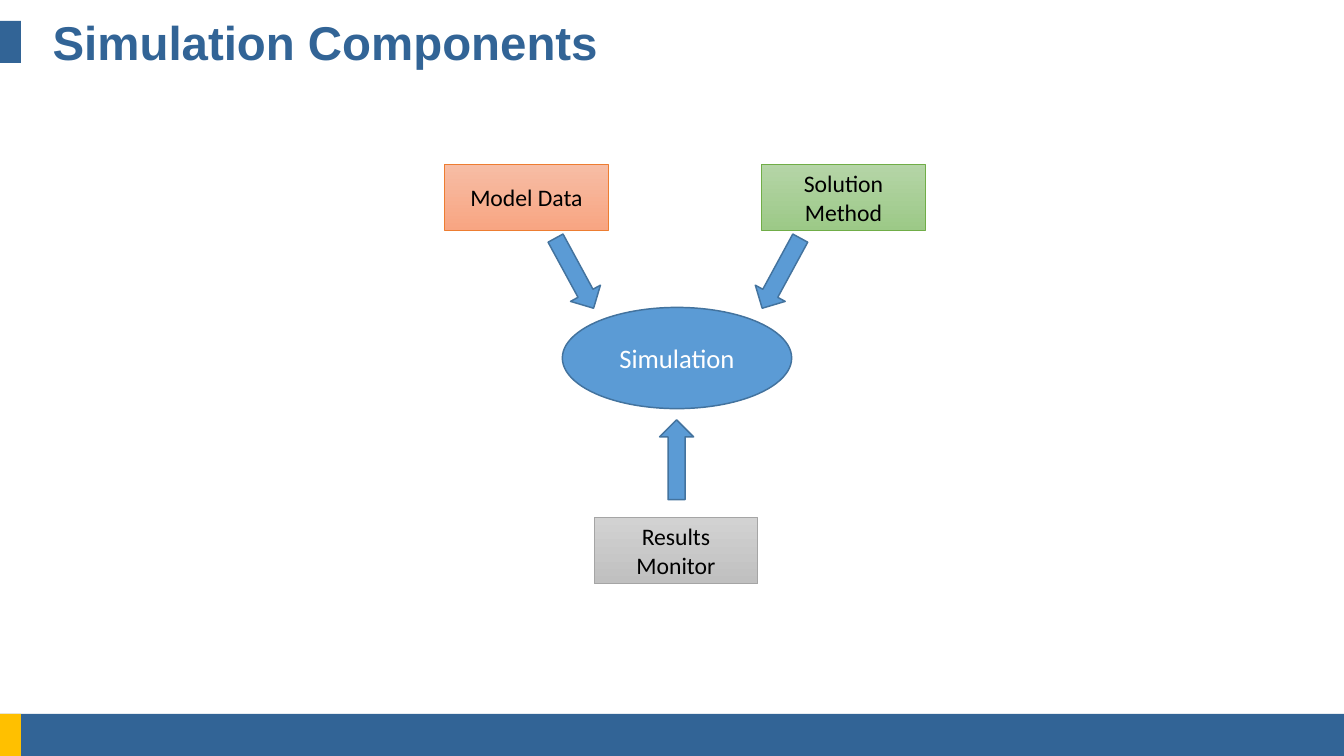
import collections

import pptx
import pptx.dml.color
import pptx.enum.shapes
import pptx.enum.text
import pptx.util

Cm = pptx.util.Cm
Pt = pptx.util.Pt
RGBColor = pptx.dml.color.RGBColor
SHAPE = pptx.enum.shapes.MSO_SHAPE
ALIGN = pptx.enum.text.PP_ALIGN
ANCHOR = pptx.enum.text.MSO_ANCHOR

NAVY = RGBColor(0x32, 0x64, 0x96)
GOLD = RGBColor(0xFF, 0xC0, 0x00)
BLUE = RGBColor(0x5B, 0x9B, 0xD5)
BLUE_EDGE = RGBColor(0x43, 0x73, 0x9E)
BLACK = RGBColor(0x00, 0x00, 0x00)
WHITE = RGBColor(0xFF, 0xFF, 0xFF)
ORANGE = RGBColor(0xED, 0x7D, 0x31)
ORANGE_TOP = RGBColor(0xF7, 0xBD, 0xA5)
ORANGE_BOTTOM = RGBColor(0xF8, 0xA5, 0x82)
GREEN = RGBColor(0x70, 0xAD, 0x47)
GREEN_TOP = RGBColor(0xB5, 0xD5, 0xA7)
GREEN_BOTTOM = RGBColor(0x9C, 0xC9, 0x87)
GRAY = RGBColor(0xA5, 0xA5, 0xA5)
GRAY_TOP = RGBColor(0xD2, 0xD2, 0xD2)
GRAY_BOTTOM = RGBColor(0xC0, 0xC0, 0xC0)

TITLE_FONT = {"name": "Arial", "size": Pt(32), "bold": True}
BOX_FONT = {"name": "Calibri", "size": Pt(16)}
CORE_FONT = {"name": "Calibri", "size": Pt(18)}

# Lengths in centimetres
Box = collections.namedtuple("Box", "left top width height")

COMPONENT_SIZE = (3.89, 1.58)
ARROW_SIZE = (1.9, 0.81)

# Text, offset in the diagram, top colour, bottom colour, edge colour
COMPONENTS = [
    ("Model Data", (0, 0), ORANGE_TOP, ORANGE_BOTTOM, ORANGE),
    ("Solution Method", (7.55, 0), GREEN_TOP, GREEN_BOTTOM, GREEN),
    ("Results Monitor", (3.56, 8.41), GRAY_TOP, GRAY_BOTTOM, GRAY),
]
# Offset in the diagram, clockwise rotation
ARROWS = [((2.14, 2.19), 61.5), ((7.06, 2.19), 118.5), ((4.57, 6.63), 270)]


def inside(box, offset, size):
    return Box(box.left + offset[0], box.top + offset[1], *size)


def format_font(font, values, color):
    for name, value in values.items():
        setattr(font, name, value)
    font.color.rgb = color


def add_figure(slide, kind, box, fill, edge=None, weight=1):
    """Add a preset shape; a pair of fill colours makes a vertical gradient."""
    figure = slide.shapes.add_shape(kind, *map(Cm, box))
    figure.shadow.inherit = False
    if isinstance(fill, list):
        figure.fill.gradient()
        figure.fill.gradient_angle = 270
        for stop, color in zip(figure.fill.gradient_stops, fill):
            stop.color.rgb = color
    else:
        figure.fill.solid()
        figure.fill.fore_color.rgb = fill
    if edge is None:
        figure.line.fill.background()
    else:
        figure.line.color.rgb = edge
        figure.line.width = Pt(weight)
    return figure


def write_label(figure, text, font, color):
    frame = figure.text_frame
    frame.word_wrap = True
    frame.vertical_anchor = ANCHOR.MIDDLE
    para = frame.paragraphs[0]
    para.alignment = ALIGN.CENTER
    span = para.add_run()
    span.text = text
    format_font(span.font, font, color)


def add_header(slide, box):
    tab = 0.5
    add_figure(slide, SHAPE.RECTANGLE, box._replace(width=tab), NAVY)
    title = slide.shapes.title
    place = Box(box.left + 2 * tab, box.top, box.width - 4 * tab, box.height)
    for name, value in place._asdict().items():
        setattr(title, name, Cm(value))
    frame = title.text_frame
    frame.auto_size = pptx.enum.text.MSO_AUTO_SIZE.NONE
    frame.vertical_anchor = ANCHOR.MIDDLE
    para = frame.paragraphs[0]
    para.alignment = ALIGN.LEFT
    span = para.add_run()
    span.text = "Simulation Components"
    format_font(span.font, TITLE_FONT, NAVY)


def add_footer(slide, box):
    add_figure(slide, SHAPE.RECTANGLE, box, NAVY)
    add_figure(slide, SHAPE.RECTANGLE, box._replace(width=0.5), GOLD)


def add_diagram(slide, box):
    for text, offset, top, bottom, edge in COMPONENTS:
        place = inside(box, offset, COMPONENT_SIZE)
        component = add_figure(slide, SHAPE.RECTANGLE, place, [top, bottom], edge, 0.5)
        write_label(component, text, BOX_FONT, BLACK)
    place = inside(box, (2.8, 3.41), (5.46, 2.41))
    core = add_figure(slide, SHAPE.OVAL, place, BLUE, BLUE_EDGE)
    write_label(core, "Simulation", CORE_FONT, WHITE)
    for offset, rotation in ARROWS:
        place = inside(box, offset, ARROW_SIZE)
        arrow = add_figure(slide, SHAPE.RIGHT_ARROW, place, BLUE, BLUE_EDGE)
        arrow.rotation = rotation


def main():
    deck = pptx.Presentation()
    deck.slide_width, deck.slide_height = Cm(32), Cm(18)
    page = deck.slides.add_slide(deck.slide_layouts.get_by_name("Title Only"))
    add_footer(page, Box(0, 17, 32, 1))
    add_header(page, Box(0, 0.5, 32, 1))
    add_diagram(page, Box(10.59, 3.91, 11.44, 9.99))
    deck.save("out.pptx")


if __name__ == "__main__":
    main()
